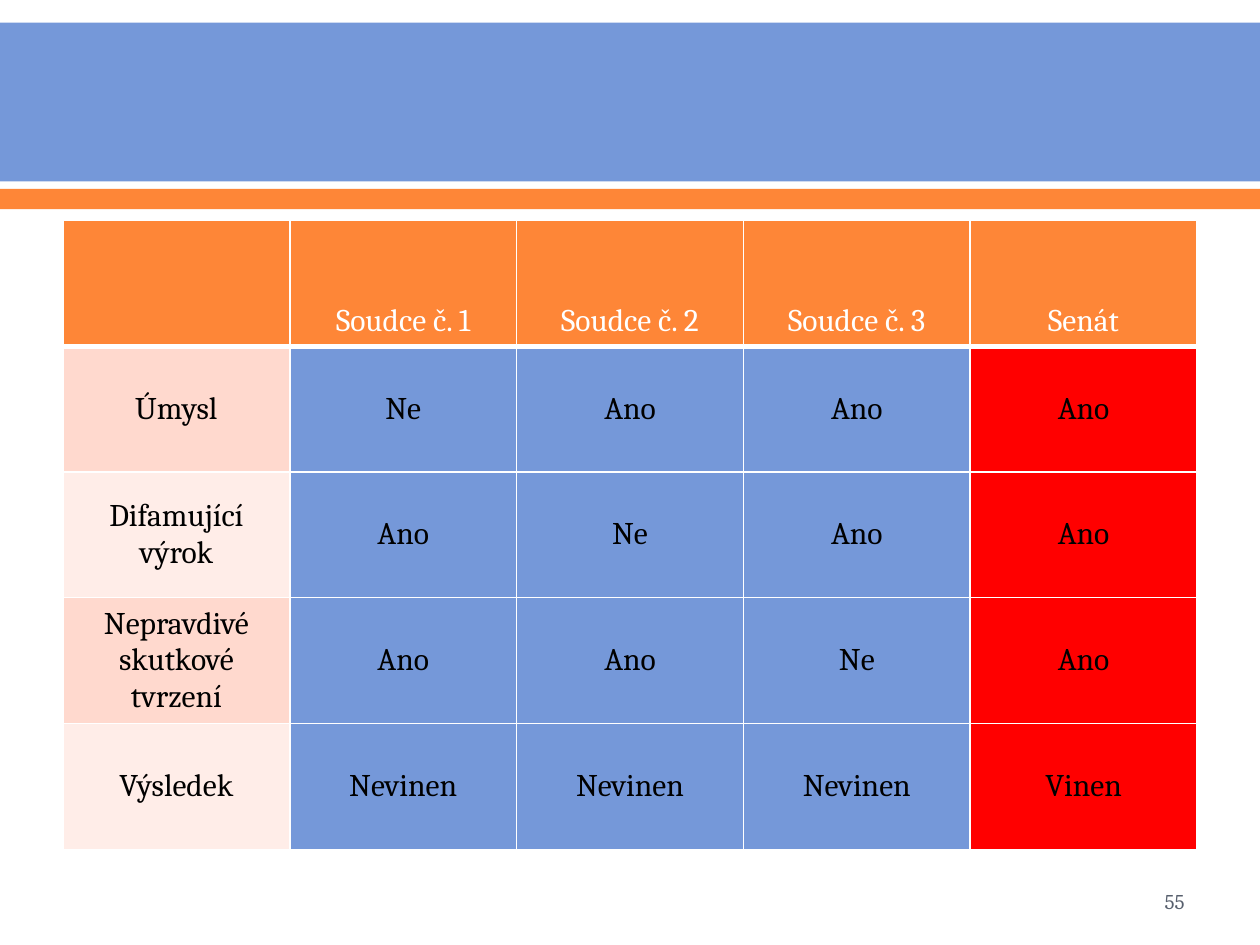
from lxml.etree import SubElement
from pptx import Presentation
from pptx.dml.color import RGBColor
from pptx.enum.shapes import MSO_SHAPE
from pptx.enum.text import MSO_ANCHOR, PP_ALIGN
from pptx.oxml.ns import qn
from pptx.util import Inches, Pt

BLUE = RGBColor(0x75, 0x98, 0xD9)
ORANGE = RGBColor(0xFE, 0x86, 0x37)
RED = RGBColor(0xFF, 0x00, 0x00)
PEACH = RGBColor(0xFF, 0xD9, 0xCE)
PALE_PEACH = RGBColor(0xFF, 0xED, 0xE8)
WHITE = RGBColor(0xFF, 0xFF, 0xFF)
BLACK = RGBColor(0x00, 0x00, 0x00)
GRAY = RGBColor(0x57, 0x5F, 0x6D)

VERDICTS = [
    ["", "Soudce č. 1", "Soudce č. 2", "Soudce č. 3", "Senát"],
    ["Úmysl", "Ne", "Ano", "Ano", "Ano"],
    ["Difamující výrok", "Ano", "Ne", "Ano", "Ano"],
    ["Nepravdivé skutkové tvrzení", "Ano", "Ano", "Ne", "Ano"],
    ["Výsledek", "Nevinen", "Nevinen", "Nevinen", "Vinen"],
]


def add_text(tf, text, size, color, align):
    p = tf.paragraphs[0]
    p.alignment = align
    r = p.add_run()
    r.text = text
    r.font.name = "Cambria"
    r.font.size = Pt(size)
    r.font.bold = False
    r.font.color.rgb = color


def set_borders(cell, bottom_width):
    tc_pr = cell._tc.get_or_add_tcPr()
    for edge, width in (("L", 1), ("R", 1), ("T", 1), ("B", bottom_width)):
        ln = SubElement(tc_pr, qn(f"a:ln{edge}"), w=str(Pt(width)))
        fill = SubElement(ln, qn("a:solidFill"))
        SubElement(fill, qn("a:srgbClr"), val=str(WHITE))


prs = Presentation()
prs.slide_width = Inches(10)
prs.slide_height = Inches(7.5)
s = prs.slides.add_slide(prs.slide_layouts[6])

# Title bands
for top, height, color in ((0.18, 1.26, BLUE), (1.5, 0.16, ORANGE)):
    band = s.shapes.add_shape(
        MSO_SHAPE.RECTANGLE, 0, Inches(top), prs.slide_width, Inches(height)
    )
    band.shadow.inherit = False
    band.fill.solid()
    band.fill.fore_color.rgb = color
    band.line.fill.background()

# Slide number
number_box = s.shapes.add_textbox(Inches(7.17), Inches(6.95), Inches(2.33), Inches(0.4))
tf = number_box.text_frame
tf.word_wrap = True
tf.vertical_anchor = MSO_ANCHOR.MIDDLE
add_text(tf, "55", 12, GRAY, PP_ALIGN.RIGHT)

# Verdict table
table = s.shapes.add_table(
    len(VERDICTS), len(VERDICTS[0]), Inches(0.5), Inches(1.75), Inches(9), Inches(4.99)
).table
table.first_row = False
table.horz_banding = False

for row, texts in enumerate(VERDICTS):
    is_header = row == 0
    label_fill = PEACH if row % 2 else PALE_PEACH
    row_fills = [ORANGE] * 5 if is_header else [label_fill, BLUE, BLUE, BLUE, RED]
    for col, (text, color) in enumerate(zip(texts, row_fills)):
        cell = table.cell(row, col)
        set_borders(cell, 3 if is_header else 1)
        cell.fill.solid()
        cell.fill.fore_color.rgb = color
        cell.vertical_anchor = MSO_ANCHOR.BOTTOM if is_header else MSO_ANCHOR.MIDDLE
        if text:
            add_text(cell.text_frame, text, 18, WHITE if is_header else BLACK, PP_ALIGN.CENTER)

prs.save("out.pptx")
